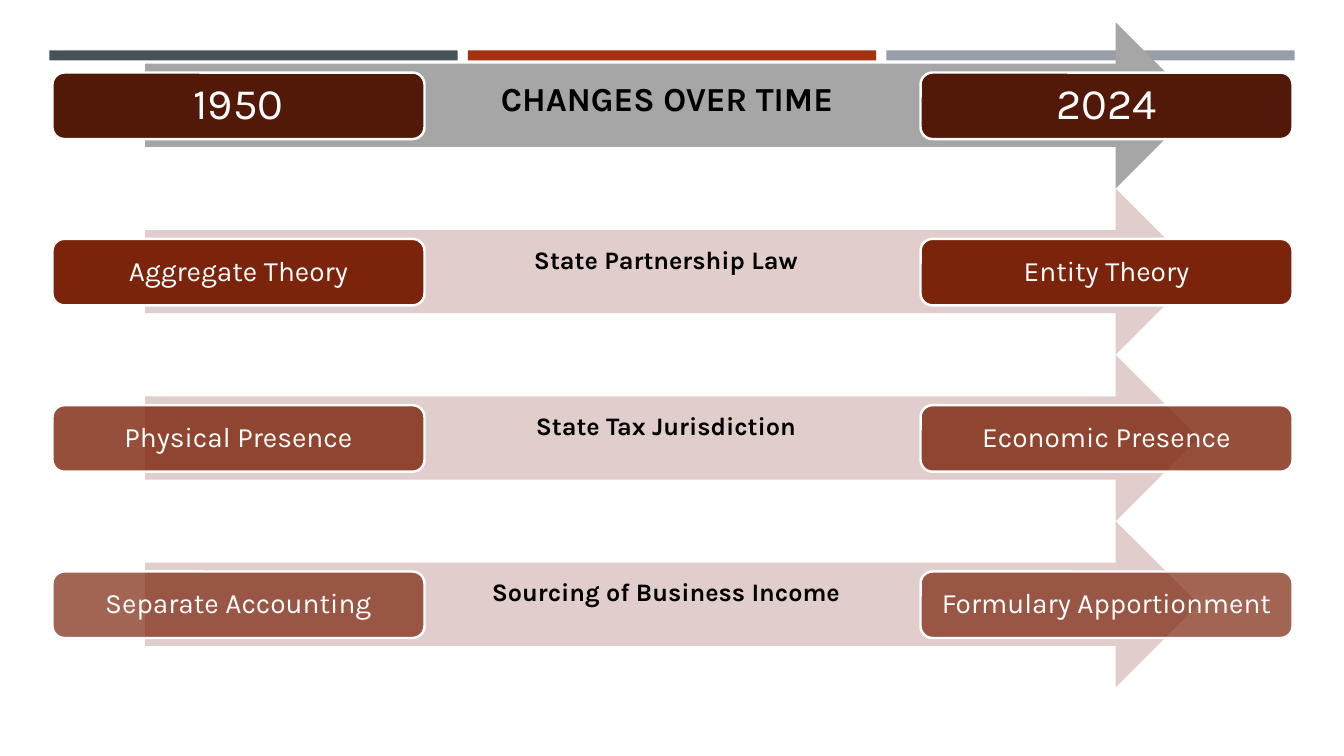
from dataclasses import dataclass

from lxml import etree
from pptx import Presentation
from pptx.dml.color import RGBColor
from pptx.enum.shapes import MSO_SHAPE
from pptx.enum.text import MSO_ANCHOR, PP_ALIGN
from pptx.oxml.ns import qn
from pptx.util import Inches, Pt

RECTANGLE = MSO_SHAPE.RECTANGLE
ROUNDED = MSO_SHAPE.ROUNDED_RECTANGLE
ARROW = MSO_SHAPE.RIGHT_ARROW
TOP, MIDDLE = MSO_ANCHOR.TOP, MSO_ANCHOR.MIDDLE
CENTER = PP_ALIGN.CENTER
TITLE_ONLY = 5


@dataclass(frozen=True)
class Theme:
    font: str = "Karla"
    black: str = "000000"
    white: str = "FFFFFF"
    bars: tuple = ("465359", "A5300F", "969FA7")
    gray: str = "A6A6A6"
    pink: str = "E1CDCC"
    maroon: str = "521808"
    brick: str = "7C240B"
    year_size: int = 31
    title_size: int = 24
    box_size: int = 20
    label_size: int = 18


class TimelineSlide:
    def __init__(self, page, theme):
        self.page = page
        self.theme = theme

    def set_text(self, shape, text, size, color, bold=False, anchor=TOP, spacing=1.0):
        frame = shape.text_frame
        frame.text = text
        para = frame.paragraphs[0]
        span = para.runs[0]
        span.font.color.rgb = RGBColor.from_string(color)
        formats = (
            (frame, {"word_wrap": True, "vertical_anchor": anchor}),
            (para, {"alignment": CENTER, "line_spacing": spacing}),
            (span.font, {"name": self.theme.font, "size": Pt(size), "bold": bold}),
        )
        for target, values in formats:
            for name, value in values.items():
                setattr(target, name, value)

    def shape(self, kind, left, top, width, height, color, opacity=100):
        shape = self.page.shapes.add_shape(
            kind, Inches(left), Inches(top), Inches(width), Inches(height))
        shape.shadow.inherit = False
        shape.line.fill.background()
        shape.fill.solid()
        shape.fill.fore_color.rgb = RGBColor.from_string(color)
        if opacity < 100:
            fill_color = shape.element.spPr.find(qn("a:solidFill"))[0]
            alpha = etree.SubElement(fill_color, qn("a:alpha"))
            alpha.set("val", str(opacity * 1000))
        return shape

    def box(self, left, top, text, size, color, opacity):
        box = self.shape(ROUNDED, left, top, 3.69, 0.66, color, opacity)
        box.adjustments[0] = 0.18
        box.line.color.rgb = RGBColor.from_string(self.theme.white)
        box.line.width = Pt(1.75)
        box.text_frame.margin_left = box.text_frame.margin_right = Inches(0.1)
        self.set_text(box, text, size, self.theme.white, anchor=MIDDLE, spacing=0.9)

    def label(self, top, text):
        label = self.page.shapes.add_textbox(
            Inches(4.68), Inches(top), Inches(3.85), Inches(0.4))
        self.set_text(label, text, self.theme.label_size, self.theme.black, bold=True)

    def title(self, top, text):
        title = self.page.shapes.title
        place = {"left": 4.69, "top": top, "width": 3.85, "height": 0.5}
        for name, value in place.items():
            setattr(title, name, Inches(value))
        self.set_text(title, text, self.theme.title_size, self.theme.black, bold=True)
        title.element.getparent().append(title.element)


def main():
    theme = Theme()
    deck = Presentation()
    deck.slide_width, deck.slide_height = Inches(13.33), Inches(7.5)
    page = deck.slides.add_slide(deck.slide_layouts[TITLE_ONLY])
    timeline = TimelineSlide(page, theme)

    for index, color in enumerate(theme.bars):
        timeline.shape(RECTANGLE, 0.49 + 4.15 * index, 0.5, 4.05, 0.1, color)

    year, topic = theme.year_size, theme.box_size
    rows = (
        ("CHANGES OVER TIME", "1950", "2024", year, theme.gray, theme.maroon, 100),
        ("State Partnership Law", "Aggregate Theory", "Entity Theory",
         topic, theme.pink, theme.brick, 100),
        ("State Tax Jurisdiction", "Physical Presence", "Economic Presence",
         topic, theme.pink, theme.brick, 80),
        ("Sourcing of Business Income", "Separate Accounting",
         "Formulary Apportionment", topic, theme.pink, theme.brick, 70),
    )
    arrow_height = 1.65
    for index, (heading, before, after, size, arrow, fill, opacity) in enumerate(rows):
        top = 0.22 + arrow_height * index
        timeline.shape(ARROW, 1.44, top, 10.45, arrow_height, arrow)
        for left, text in ((0.52, before), (9.13, after)):
            timeline.box(left, top + 0.5, text, size, fill, opacity)
        add_heading = timeline.label if index else timeline.title
        add_heading(top + 0.5, heading)

    deck.save("out.pptx")


if __name__ == "__main__":
    main()
